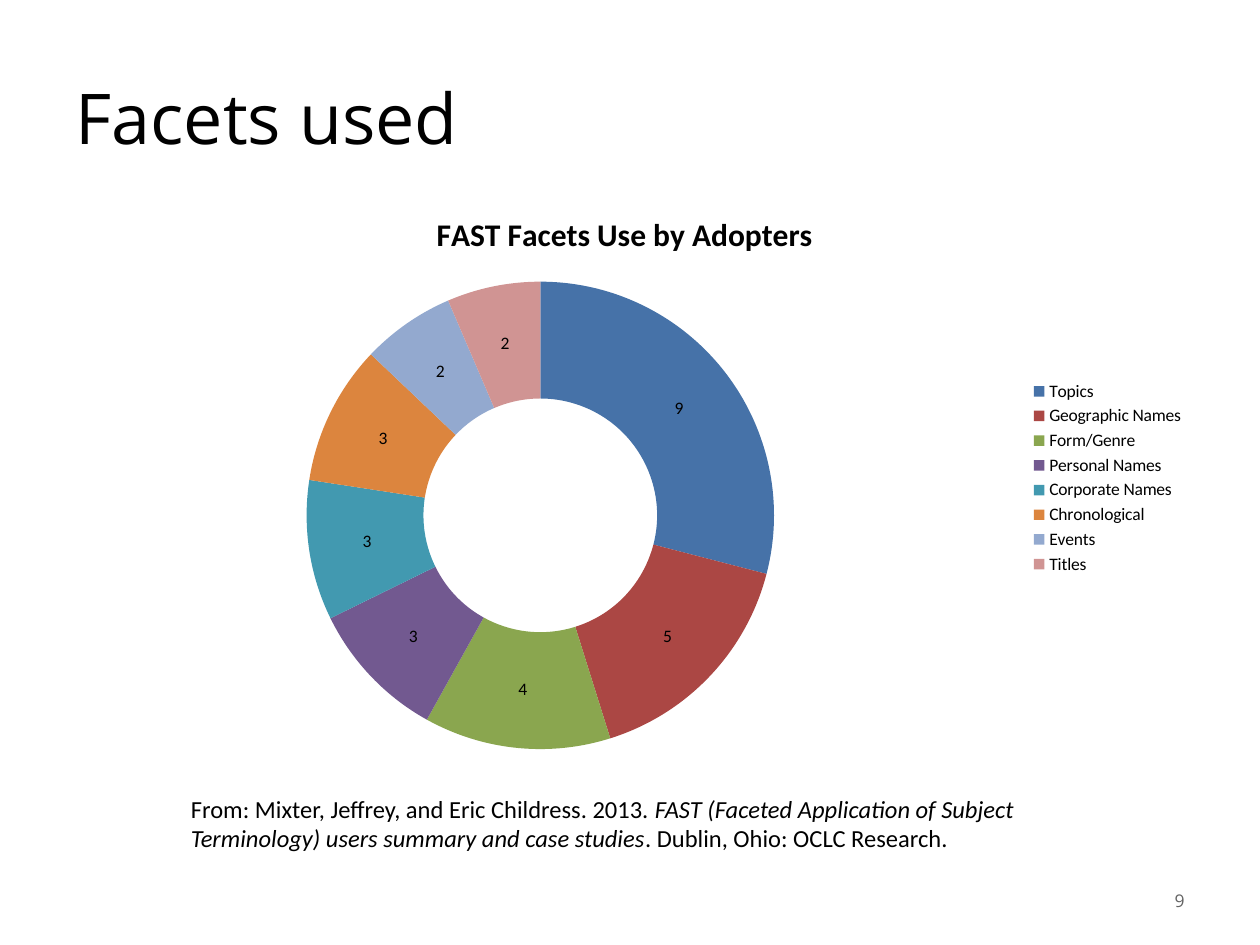
"""Build the slide on facet use: a doughnut chart with its citation."""
from dataclasses import dataclass
from typing import Any

from pptx import Presentation
from pptx.chart.data import CategoryChartData
from pptx.dml.color import RGBColor
from pptx.enum.chart import XL_CHART_TYPE, XL_LEGEND_POSITION
from pptx.enum.text import MSO_ANCHOR, PP_ALIGN
from pptx.util import Pt


@dataclass(frozen=True)
class Theme:
    heading_font: str = "Open Sans"
    body_font: str = "Calibri"
    ink: str = "000000"
    muted: str = "646464"
    title_size: int = 40
    chart_title_size: int = 18
    citation_size: int = 14
    small_size: int = 10


@dataclass(frozen=True)
class Area:
    left: float
    top: float
    width: float
    height: float

    def lengths(self) -> tuple:
        return tuple(Pt(n) for n in (self.left, self.top, self.width, self.height))


@dataclass(frozen=True)
class Facet:
    name: str
    adopters: int
    color: str


@dataclass(frozen=True)
class Span:
    text: str
    italic: bool = False


THEME = Theme()
CHART_TITLE = "FAST Facets Use by Adopters"
FACETS = (
    Facet("Topics", 9, "4672A8"),
    Facet("Geographic Names", 5, "AB4744"),
    Facet("Form/Genre ", 4, "8AA64F"),
    Facet("Personal Names", 3, "725990"),
    Facet("Corporate Names", 3, "4299B0"),
    Facet("Chronological", 3, "DC853E"),
    Facet("Events", 2, "93A9CF"),
    Facet("Titles", 2, "D09493"),
)
CITATION = (
    Span("From: Mixter, Jeffrey, and Eric Childress. 2013. "),
    Span("FAST (Faceted Application of Subject Terminology) users summary and case studies", True),
    Span(". Dublin, Ohio: OCLC Research."),
)


def set_values(target: Any, values: dict[str, Any]) -> None:
    for name, value in values.items():
        setattr(target, name, value)


def set_font(font: Any, name: str, size: int, color: str, **extra: bool) -> None:
    set_values(font, {"name": name, "size": Pt(size), **extra})
    font.color.rgb = RGBColor.from_string(color)


def place_title(page: Any, text: str, area: Area) -> None:
    title = page.shapes.title
    set_values(title, dict(zip(("left", "top", "width", "height"), area.lengths())))
    frame = title.text_frame
    set_values(frame, {"text": text, "vertical_anchor": MSO_ANCHOR.MIDDLE})
    para = frame.paragraphs[0]
    para.alignment = PP_ALIGN.LEFT
    set_font(para.runs[0].font, THEME.heading_font, THEME.title_size, THEME.ink)


def add_text(page: Any, spans: tuple[Span, ...], area: Area, font_name: str, size: int,
             color: str, anchor: Any = MSO_ANCHOR.TOP, align: Any = PP_ALIGN.LEFT) -> None:
    frame = page.shapes.add_textbox(*area.lengths()).text_frame
    set_values(frame, {"word_wrap": True, "vertical_anchor": anchor})
    para = frame.paragraphs[0]
    para.alignment = align
    for span in spans:
        run = para.add_run()
        run.text = span.text
        set_font(run.font, font_name, size, color, italic=span.italic)


def add_doughnut(page: Any, title: str, facets: tuple[Facet, ...], area: Area) -> None:
    data = CategoryChartData()
    data.categories = [facet.name for facet in facets]
    data.add_series(title, [facet.adopters for facet in facets])
    chart = page.shapes.add_chart(XL_CHART_TYPE.DOUGHNUT, *area.lengths(), data).chart
    set_font(chart.font, THEME.body_font, THEME.small_size, THEME.ink)

    set_values(chart, {"has_title": True, "has_legend": True})
    heading = chart.chart_title.text_frame
    heading.text = title
    set_font(heading.paragraphs[0].runs[0].font, THEME.body_font,
             THEME.chart_title_size, THEME.ink, bold=True)
    set_values(chart.legend, {"position": XL_LEGEND_POSITION.RIGHT, "include_in_layout": False})

    plot = chart.plots[0]
    set_values(plot, {"vary_by_categories": True, "has_data_labels": True})
    set_values(plot.data_labels, {"show_value": True, "show_percentage": False})
    for index, facet in enumerate(facets):
        point = plot.series[0].points[index].format
        point.fill.solid()
        point.fill.fore_color.rgb = RGBColor.from_string(facet.color)
        point.line.fill.background()


def main() -> None:
    deck = Presentation()
    set_values(deck, {"slide_width": Pt(720), "slide_height": Pt(540)})
    page = deck.slides.add_slide(deck.slide_layouts.get_by_name("Title Only"))
    place_title(page, "Facets used", Area(36, 21.6, 648, 90))
    add_text(page, (Span("9"),), Area(516, 500.5, 168, 28.75), THEME.heading_font,
             THEME.small_size, THEME.muted, MSO_ANCHOR.MIDDLE, PP_ALIGN.RIGHT)
    add_doughnut(page, CHART_TITLE, FACETS, Area(30, 108, 654, 330))
    add_text(page, CITATION, Area(102, 450, 522, 41.2), THEME.body_font,
             THEME.citation_size, THEME.ink)
    deck.save("out.pptx")


if __name__ == "__main__":
    main()
